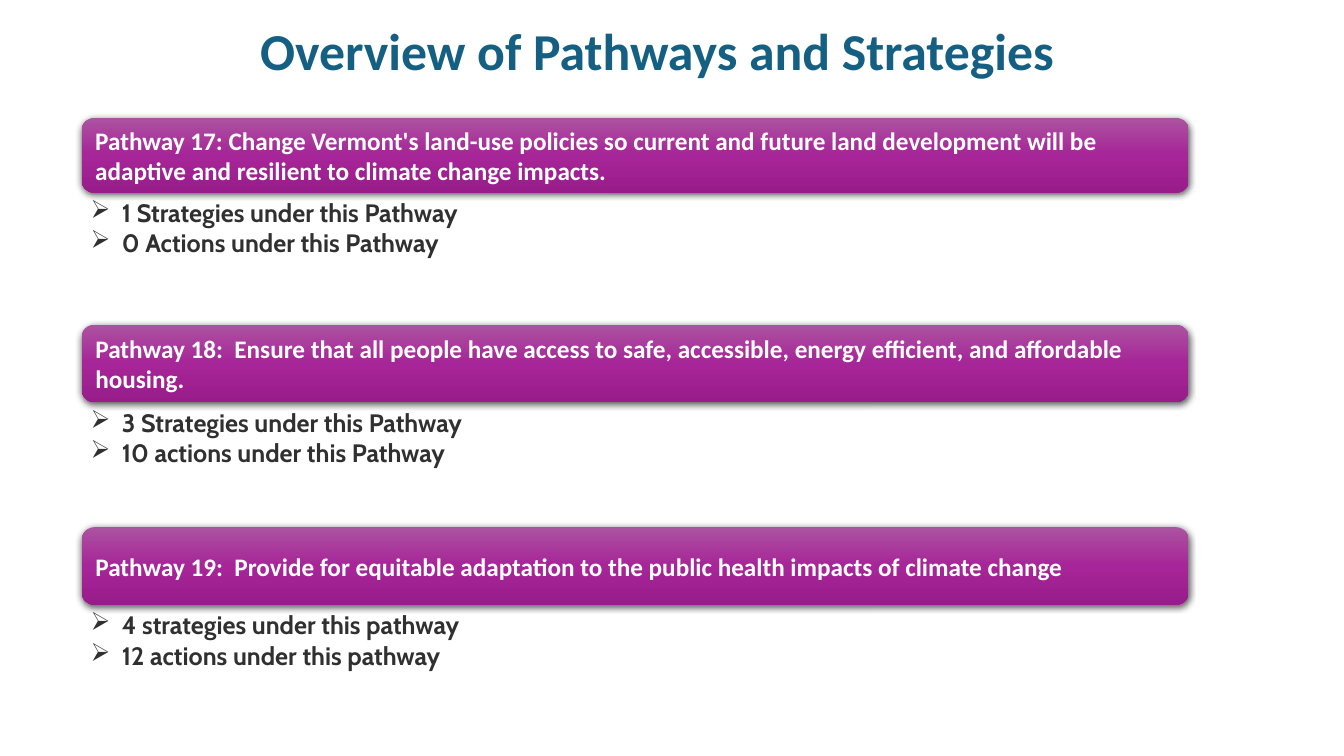
import copy
import pptx
import pptx.dml.color
import pptx.enum.shapes
import pptx.enum.text
import pptx.oxml
import pptx.oxml.ns
import pptx.util

Inches = pptx.util.Inches
Pt = pptx.util.Pt
qn = pptx.oxml.ns.qn
ANCHOR = pptx.enum.text.MSO_ANCHOR
FIT = pptx.enum.text.MSO_AUTO_SIZE
ALIGN = pptx.enum.text.PP_ALIGN
NS = 'xmlns:a="http://schemas.openxmlformats.org/drawingml/2006/main"'

TITLE = "Overview of Pathways and Strategies "
# Each pathway: bar top, bar height, heading, bullet items
PATHS = [
    (1.17, 0.74, "Pathway 17: Change Vermont's land-use policies so current and future "
     "land development will be adaptive and resilient to climate change impacts.",
     ["1 Strategies under this Pathway", "0 Actions under this Pathway"]),
    (3.22, 0.77, "Pathway 18:  Ensure that all people have access to safe, accessible, "
     "energy efficient, and affordable housing.",
     ["3 Strategies under this Pathway", "10 actions under this Pathway"]),
    (5.23, 0.77, "Pathway 19:  Provide for equitable adaptation to the public health "
     "impacts of climate change",
     ["4 strategies under this pathway", "12 actions under this pathway"]),
]


def color(text):
    return pptx.dml.color.RGBColor.from_string(text)


def apply(item, form):
    """Set each attribute named in a dict of format values."""
    for name, value in form.items():
        setattr(item, name, value)


class Deck:
    fonts = {
        "title": ("Calibri", 37, "156082"),
        "bar": ("Calibri", 18, "FFFFFF"),
        "list": ("Cabin", 18, "303030"),
    }
    grade = [(0, "AC53A0"), (0.5, "A62598"), (1, "991C8B")]

    def __init__(self):
        self.prs = pptx.Presentation()
        apply(self.prs, {"slide_width": Inches(13.33), "slide_height": Inches(7.5)})
        self.slide = self.prs.slides.add_slide(self.prs.slide_layouts[5])

    def label(self, para, text, style, **form):
        """Add one styled run to a paragraph and format the paragraph."""
        name, size, tint = self.fonts[style]
        run = para.add_run()
        run.text = text
        apply(run.font, {"name": name, "size": Pt(size), "bold": True})
        run.font.color.rgb = color(tint)
        apply(para, form)

    def title(self, text, left, top, width, height):
        shape = self.slide.shapes.title
        apply(shape, {"left": Inches(left), "top": Inches(top),
                      "width": Inches(width), "height": Inches(height)})
        frame = shape.text_frame
        apply(frame, {"word_wrap": True, "auto_size": FIT.NONE,
                      "vertical_anchor": ANCHOR.MIDDLE})
        self.label(frame.paragraphs[0], text, "title", alignment=ALIGN.CENTER,
                   line_spacing=0.7, space_before=Pt(10))

    def shade(self, shape):
        """Give the shape its three-stop gradient and soft shadow."""
        shape.fill.gradient()
        shape.fill.gradient_angle = 270
        stops = shape._element.spPr.find(".//" + qn("a:gsLst"))
        stops.append(copy.deepcopy(stops[-1]))
        for stop, (spot, tint) in zip(shape.fill.gradient_stops, self.grade):
            stop.position = spot
            stop.color.rgb = color(tint)
        shape.line.fill.background()
        shape.shadow.inherit = False
        shape._element.spPr.find(qn("a:effectLst")).append(pptx.oxml.parse_xml(
            f'<a:outerShdw {NS} blurRad="{Pt(4.5)}" dist="{Pt(1.5)}" dir="5400000" '
            'algn="ctr" rotWithShape="0"><a:srgbClr val="000000">'
            '<a:alpha val="63000"/></a:srgbClr></a:outerShdw>'))

    def bar(self, text, left, top, width, height):
        shape = self.slide.shapes.add_shape(
            pptx.enum.shapes.MSO_SHAPE.ROUNDED_RECTANGLE,
            Inches(left), Inches(top), Inches(width), Inches(height))
        self.shade(shape)
        frame = shape.text_frame
        apply(frame, {"word_wrap": True, "vertical_anchor": ANCHOR.MIDDLE})
        self.label(frame.paragraphs[0], text, "bar", alignment=ALIGN.LEFT)

    def bullets(self, items, left, top, width, height):
        box = self.slide.shapes.add_textbox(
            Inches(left), Inches(top), Inches(width), Inches(height))
        frame = box.text_frame
        apply(frame, {"word_wrap": True, "auto_size": FIT.SHAPE_TO_FIT_TEXT})
        for i, item in enumerate(items):
            para = frame.add_paragraph() if i else frame.paragraphs[0]
            self.label(para, item, "list")
            props = para._p.get_or_add_pPr()
            props.set("marL", str(Inches(0.31)))
            props.set("indent", str(Inches(-0.31)))
            props.append(pptx.oxml.parse_xml(f'<a:buChar {NS} char="➢"/>'))


def main():
    deck = Deck()
    deck.title(TITLE, 0.44, 0.27, 12.27, 0.6)
    for top, height, head, items in PATHS:
        deck.bar(head, 0.81, top, 10.98, height)
        deck.bullets(items, 0.8, top + height, 10.28, 0.71)
    deck.prs.save("out.pptx")


if __name__ == "__main__":
    main()
